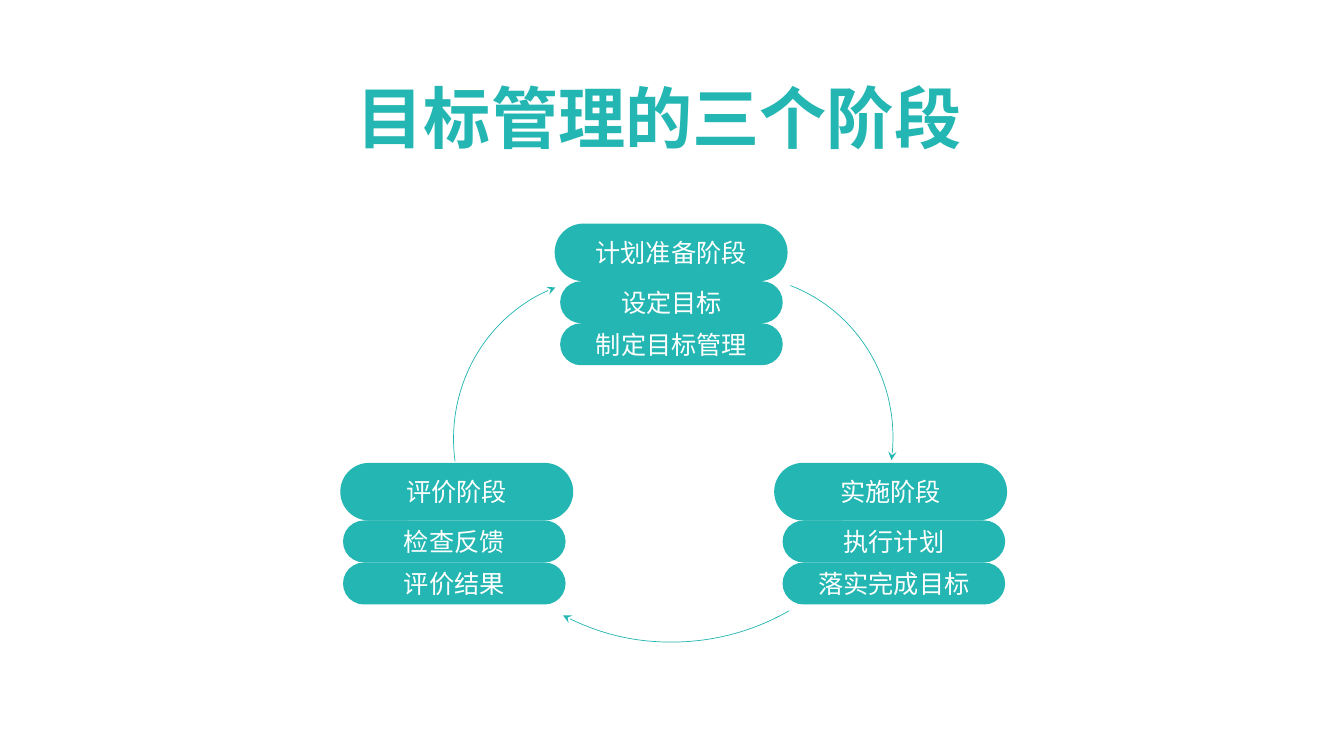
from pptx import Presentation
from pptx.dml.color import RGBColor
from pptx.enum import shapes, text
from pptx.oxml import parse_xml
from pptx.oxml.ns import nsdecls
from pptx.util import Pt

COLORS = {"teal": "23B6B2", "white": "FFFFFF"}
HEAD = (166.4, 41.2)
STEP = (159, 30)

# heading, heading left, steps left, top, steps
STAGES = [
    ("计划准备阶段", 396.2, 400.1, 159.7, ["设定目标", "制定目标管理"]),
    ("评价阶段", 243.1, 245, 330.6, ["检查反馈", "评价结果"]),
    ("实施阶段", 553, 559, 330.6, ["执行计划", "落实完成目标"]),
]

# box, rotation, angles, flipped, arrow end
SIDE = (106.22, 152.87)
BASE = (108.28, 142.71)
ARCS = [
    ((411.1, 196.6, 226.8, 232.6), 5, SIDE, True, "headEnd"),
    ((311.8, 122.4, 336.2, 336.2), 118, BASE, True, "headEnd"),
    ((324, 198, 225.4, 231.8), 355, SIDE, False, "tailEnd"),
]


def color(name):
    return RGBColor.from_string(COLORS[name])


def style(para, words, size, tint, bold=False):
    para.text = words
    font = para.font
    font.name = "Arial"
    font.size = Pt(size)
    font.bold = bold
    font.color.rgb = color(tint)


def add_title(slide, words, box):
    frame = slide.shapes.add_textbox(*map(Pt, box)).text_frame
    frame.word_wrap = False
    frame.auto_size = text.MSO_AUTO_SIZE.SHAPE_TO_FIT_TEXT
    style(frame.paragraphs[0], words, 48, "teal", True)


def add_pill(slide, words, left, top, size):
    pill = slide.shapes.add_shape(
        shapes.MSO_SHAPE.ROUNDED_RECTANGLE, *map(Pt, (left, top, *size)))
    pill.adjustments[0] = 0.5
    pill.shadow.inherit = False
    pill.fill.solid()
    pill.fill.fore_color.rgb = color("teal")
    pill.line.fill.background()
    frame = pill.text_frame
    frame.word_wrap = True
    frame.vertical_anchor = text.MSO_ANCHOR.MIDDLE
    para = frame.paragraphs[0]
    para.alignment = text.PP_ALIGN.CENTER
    style(para, words, 18, "white")


def add_stage(slide, name, left, inner, top, steps):
    """Add a heading pill with its step pills stacked below."""
    add_pill(slide, name, left, top, HEAD)
    for row, step in enumerate(steps):
        add_pill(slide, step, inner, top + HEAD[1] + row * STEP[1], STEP)


def add_arc(slide, box, turn, angles, flip, end):
    arc = slide.shapes.add_shape(shapes.MSO_SHAPE.ARC, *map(Pt, box))
    arc.rotation = turn
    for i, angle in enumerate(angles):
        arc.adjustments[i] = angle
    arc.shadow.inherit = False
    arc.fill.background()
    arc.line.color.rgb = color("teal")
    arc.line.width = Pt(0.5)
    props = arc.element.spPr
    if flip:
        props.xfrm.set("flipH", "1")
    props.ln.append(parse_xml(f'<a:{end} {nsdecls("a")} type="stealth"/>'))


def main():
    deck = Presentation()
    deck.slide_width, deck.slide_height = Pt(960), Pt(540)
    slide = deck.slides.add_slide(deck.slide_layouts[6])
    add_title(slide, "目标管理的三个阶段", (247.7, 51.1, 446.4, 65.5))
    for arc in ARCS:
        add_arc(slide, *arc)
    for stage in STAGES:
        add_stage(slide, *stage)
    deck.save("out.pptx")


if __name__ == "__main__":
    main()
